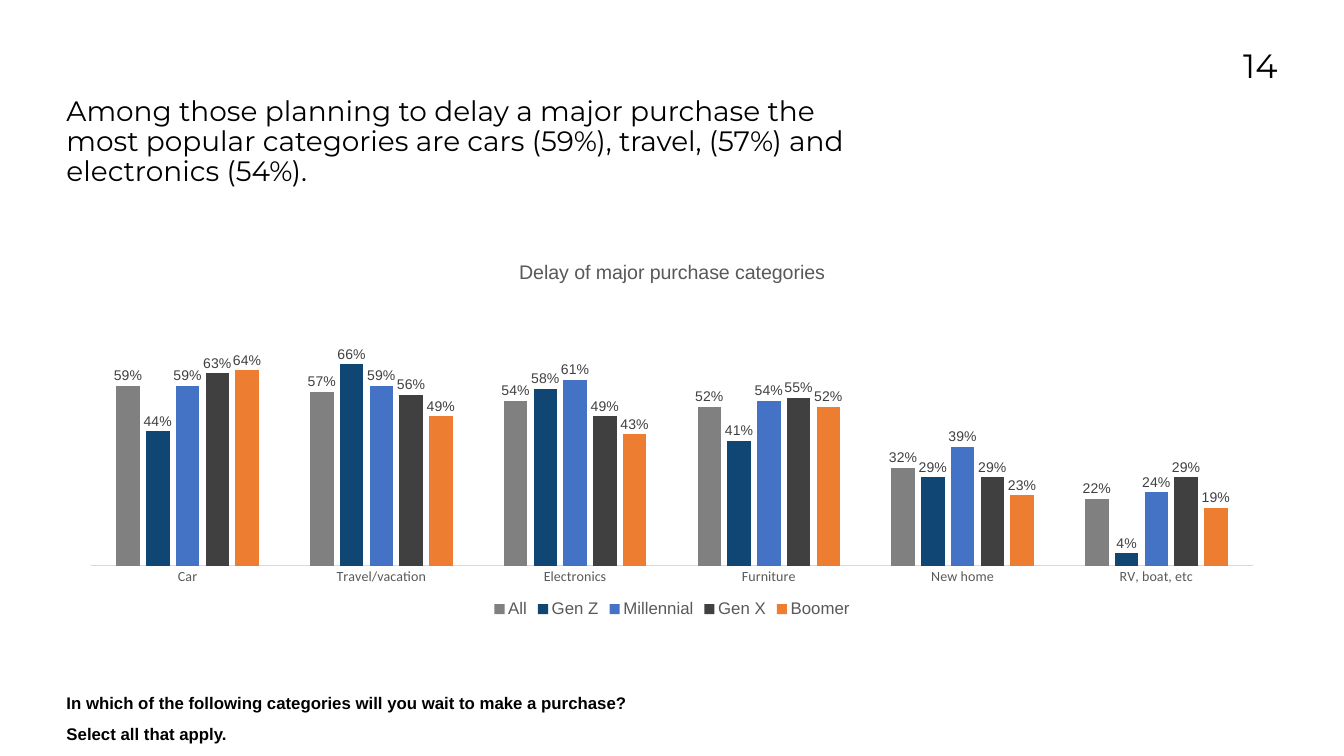
from lxml import etree
from pptx import Presentation
from pptx import util as u
from pptx.chart.data import CategoryChartData
from pptx.dml.color import RGBColor
from pptx.enum import chart as ch, text as tx
from pptx.oxml import parse_xml
from pptx.oxml.ns import nsdecls, qn

HEADLINE = ("Among those planning to delay a major purchase the most popular "
            "categories are cars (59%), travel, (57%) and electronics (54%).")
QUESTION = ("In which of the following categories will you wait to make a purchase? "
            "Select all that apply.")
PAGE_NUMBER = "14"
CHART_TITLE = "Delay of major purchase categories"
CATEGORIES = ["Car", "Travel/vacation", "Electronics", "Furniture", "New home", "RV, boat, etc"]
GENERATIONS = [
    ("All", "808080", (0.59, 0.57, 0.54, 0.52, 0.32, 0.22)),
    ("Gen Z", "104674", (0.44, 0.66, 0.58, 0.41, 0.29, 0.04)),
    ("Millennial", "4472C4", (0.59, 0.59, 0.61, 0.54, 0.39, 0.24)),
    ("Gen X", "404040", (0.63, 0.56, 0.49, 0.55, 0.29, 0.29)),
    ("Boomer", "ED7D31", (0.64, 0.49, 0.43, 0.52, 0.23, 0.19)),
]

THEME = {
    "headline": {"name": "Montserrat", "size": 40, "bold": False, "color": "000000"},
    "page": {"name": "Montserrat", "size": 48, "bold": False, "color": "000000"},
    "question": {"name": "Arial", "size": 24, "bold": True, "color": "000000"},
    "chart": {"name": "Calibri", "size": 10, "bold": False, "color": "000000"},
    "chart_title": {"name": "Arial", "size": 28, "bold": False, "color": "595959"},
    "category": {"name": "Calibri", "size": 20, "bold": False, "color": "595959"},
    "legend": {"name": "Arial", "size": 24, "bold": False, "color": "595959"},
    "value": {"name": "Arial", "size": 20, "bold": False, "color": "404040"},
    "axis": "D9D9D9",
}

SLIDE_W, SLIDE_H = 67.74, 38.1
MARGIN = 3.35
CONTENT_W = SLIDE_W - 2 * MARGIN
PAGE_W = 5.72
PLOT_AREA = {"x": 0.02, "y": 0.12, "w": 0.96, "h": 0.73}


def assign(target, values):
    for attribute, value in values.items():
        setattr(target, attribute, value)


def style(font, role):
    look = dict(THEME[role])
    font.color.rgb = RGBColor.from_string(look.pop("color"))
    look["size"] = u.Pt(look["size"])
    assign(font, look)


def write(holder, words, role, place, align=tx.PP_ALIGN.LEFT, spacing=1.0):
    assign(holder, dict(zip(("left", "top", "width", "height"), map(u.Cm, place))))
    frame = holder.text_frame
    frame.text = words
    assign(frame, {"word_wrap": True, "auto_size": tx.MSO_AUTO_SIZE.NONE,
                   "vertical_anchor": tx.MSO_ANCHOR.TOP, "margin_left": 0,
                   "margin_right": 0, "margin_top": 0, "margin_bottom": 0})
    paragraph = frame.paragraphs[0]
    properties = paragraph._p.get_or_add_pPr()
    properties.set("marL", "0")
    properties.set("indent", "0")
    etree.SubElement(properties, qn("a:buNone"))
    assign(paragraph, {"alignment": align, "line_spacing": spacing,
                       "space_before": u.Pt(0), "space_after": u.Pt(0)})
    style(paragraph.runs[0].font, role)


def fix_plot_area(chart):
    plot_area = chart._chartSpace.chart.plotArea
    for layout in plot_area.findall(qn("c:layout")):
        plot_area.remove(layout)
    settings = '<c:layoutTarget val="inner"/><c:xMode val="edge"/><c:yMode val="edge"/>'
    settings += "".join(f'<c:{side} val="{share}"/>' for side, share in PLOT_AREA.items())
    plot_area.insert(0, parse_xml(
        f'<c:layout {nsdecls("c")}><c:manualLayout>{settings}</c:manualLayout></c:layout>'))


def add_delay_chart(slide, place):
    delays = CategoryChartData(number_format="0%")
    delays.categories = CATEGORIES
    for generation, _, shares in GENERATIONS:
        delays.add_series(generation, shares)
    chart = slide.shapes.add_chart(
        ch.XL_CHART_TYPE.COLUMN_CLUSTERED, *map(u.Cm, place), delays).chart
    style(chart.font, "chart")

    chart.has_title = True
    heading = chart.chart_title.text_frame
    heading.text = CHART_TITLE
    style(heading.paragraphs[0].runs[0].font, "chart_title")
    chart.chart_title.include_in_layout = False

    chart.has_legend = True
    assign(chart.legend, {"position": ch.XL_LEGEND_POSITION.BOTTOM, "include_in_layout": False})
    style(chart.legend.font, "legend")

    assign(chart.value_axis, {"minimum_scale": 0, "maximum_scale": 0.9,
                              "has_major_gridlines": False, "visible": False})
    categories = chart.category_axis
    assign(categories, {"major_tick_mark": ch.XL_TICK_MARK.NONE,
                        "minor_tick_mark": ch.XL_TICK_MARK.NONE})
    style(categories.tick_labels.font, "category")
    categories.format.line.color.rgb = RGBColor.from_string(THEME["axis"])
    categories.format.line.width = u.Pt(0.75)

    columns = chart.plots[0]
    assign(columns, {"gap_width": 219, "overlap": -27, "vary_by_categories": False})
    for series, (_, colour, _) in zip(columns.series, GENERATIONS):
        series.format.fill.solid()
        series.format.fill.fore_color.rgb = RGBColor.from_string(colour)
        labels = series.data_labels
        assign(labels, {"show_value": True, "position": ch.XL_LABEL_POSITION.OUTSIDE_END,
                        "number_format": "0%", "number_format_is_linked": False})
        style(labels.font, "value")
    fix_plot_area(chart)


def main():
    deck = Presentation()
    assign(deck, {"slide_width": u.Cm(SLIDE_W), "slide_height": u.Cm(SLIDE_H)})
    slide = deck.slides.add_slide(deck.slide_layouts[1])
    page_place = (SLIDE_W - MARGIN - PAGE_W, 2.24, PAGE_W, 4.17)
    page = slide.shapes.add_textbox(*map(u.Cm, page_place))
    write(page, PAGE_NUMBER, "page", page_place, tx.PP_ALIGN.RIGHT)
    add_delay_chart(slide, (MARGIN, 12.4, CONTENT_W, 18.95))
    write(slide.shapes.title, HEADLINE, "headline", (MARGIN, 4.9, 40.67, 5.28), spacing=0.9)
    write(slide.placeholders[1], QUESTION, "question", (MARGIN, 34.42, 30.5, 1.65), spacing=1.5)
    deck.save("out.pptx")


if __name__ == "__main__":
    main()
